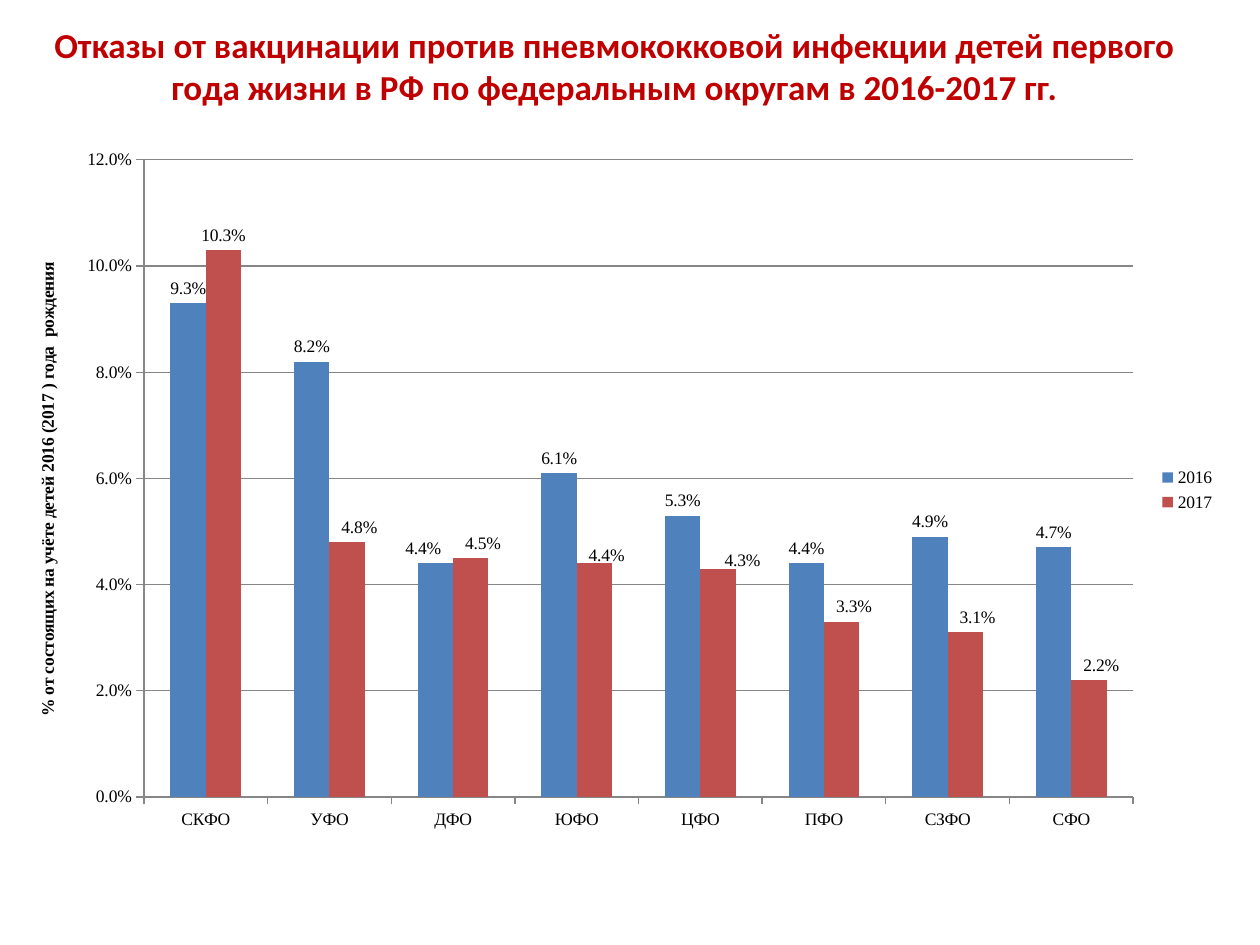
from lxml import etree
from pptx import Presentation
from pptx.chart.data import CategoryChartData
from pptx.dml.color import RGBColor
from pptx.enum.chart import XL_CHART_TYPE, XL_LABEL_POSITION, XL_LEGEND_POSITION, XL_TICK_MARK
from pptx.enum.text import MSO_ANCHOR, PP_ALIGN
from pptx.oxml.ns import qn
from pptx.util import Cm, Pt

COLUMN = XL_CHART_TYPE.COLUMN_CLUSTERED
OUTSIDE_END = XL_LABEL_POSITION.OUTSIDE_END
RIGHT = XL_LEGEND_POSITION.RIGHT
TICK_OUT = XL_TICK_MARK.OUTSIDE
MIDDLE = MSO_ANCHOR.MIDDLE
CENTER = PP_ALIGN.CENTER

RED = RGBColor(0xC0, 0x00, 0x00)
BLACK = RGBColor(0x00, 0x00, 0x00)
GRAY = RGBColor(0x86, 0x86, 0x86)
BLUE_BAR = RGBColor(0x4F, 0x81, 0xBD)
RED_BAR = RGBColor(0xC0, 0x50, 0x4D)

DISTRICTS = ["СКФО", "УФО", "ДФО", "ЮФО", "ЦФО", "ПФО", "СЗФО", "СФО"]
REFUSALS = {
    "2016": [0.093, 0.082, 0.044, 0.061, 0.053, 0.044, 0.049, 0.047],
    "2017": [0.103, 0.048, 0.045, 0.044, 0.043, 0.033, 0.031, 0.022],
}
BAR_COLORS = [BLUE_BAR, RED_BAR]
LABEL_SHIFTS = [
    {2: (-0.01, 0)},
    {1: (0.01, 0), 2: (0.01, 0), 3: (0.01, 0.01), 4: (0.02, 0.01),
     5: (0.01, 0), 6: (0.01, 0), 7: (0.01, 0)},
]


def make_layout(**settings):
    layout = etree.Element(qn("c:layout"))
    manual = etree.SubElement(layout, qn("c:manualLayout"))
    for tag, val in settings.items():
        etree.SubElement(manual, qn("c:" + tag)).set("val", str(val))
    return layout


prs = Presentation()
prs.slide_width, prs.slide_height = Cm(25.4), Cm(19.05)
s = prs.slides.add_slide(prs.slide_layouts[5])

title = s.shapes.title
title.left, title.top, title.width, title.height = Cm(0.64), Cm(0.76), Cm(23.5), Cm(1.98)
tf = title.text_frame
tf.word_wrap = True
tf.vertical_anchor = MIDDLE
p = tf.paragraphs[0]
p.alignment = CENTER
r = p.add_run()
r.text = ("Отказы от вакцинации против пневмококковой инфекции детей первого "
          "года жизни в РФ по федеральным округам в 2016-2017 гг.")
r.font.name = "Calibri"
r.font.size = Pt(20)
r.font.bold = True
r.font.color.rgb = RED
p.add_line_break()
p.font.size = Pt(20)

data = CategoryChartData(number_format="0.0%")
data.categories = DISTRICTS
for year, shares in REFUSALS.items():
    data.add_series(year, shares)
chart = s.shapes.add_chart(COLUMN, Cm(0.2), Cm(2.74), Cm(24.56), Cm(14.27), data).chart
chart.has_title = False
chart.font.name = "Times New Roman"
chart.font.size = Pt(10)
chart.font.color.rgb = BLACK
chart.has_legend = True
chart.legend.position = RIGHT
chart.legend.include_in_layout = False

plot_area = chart.plots[0]._element.getparent()
for old in plot_area.findall(qn("c:layout")):
    plot_area.remove(old)
plot_area.insert(0, make_layout(layoutTarget="inner", xMode="edge", yMode="edge",
                                x=0.11, y=0.034, w=0.812, h=0.9))

for axis in (chart.category_axis, chart.value_axis):
    axis.major_tick_mark = TICK_OUT
    axis.format.line.color.rgb = GRAY
    axis.format.line.width = Pt(0.75)
val_axis = chart.value_axis
val_axis.minimum_scale, val_axis.maximum_scale, val_axis.major_unit = 0, 0.12, 0.02
val_axis.tick_labels.number_format = "0.0%"
val_axis.tick_labels.number_format_is_linked = False
val_axis.has_major_gridlines = True
val_axis.major_gridlines.format.line.color.rgb = GRAY
p = val_axis.axis_title.text_frame.paragraphs[0]
r = p.add_run()
r.text = "% от состоящих на учёте детей 2016 (2017 ) года  рождения"
r.font.name = "Times New Roman"
r.font.size = Pt(10)
r.font.bold = True
r.font.color.rgb = BLACK

plot = chart.plots[0]
plot.gap_width = 150
plot.overlap = 0
plot.vary_by_categories = False
for series, color, shifts in zip(plot.series, BAR_COLORS, LABEL_SHIFTS):
    series.format.fill.solid()
    series.format.fill.fore_color.rgb = color
    labels = series.data_labels
    labels.show_value = True
    labels.position = OUTSIDE_END
    labels.number_format = "0.0%"
    labels.number_format_is_linked = False
    for i, (dx, dy) in shifts.items():
        series.points[i].data_label.position = OUTSIDE_END
        idx = labels._element.findall(qn("c:dLbl"))[-1].find(qn("c:idx"))
        idx.addnext(make_layout(x=dx, y=dy))

prs.save("out.pptx")
